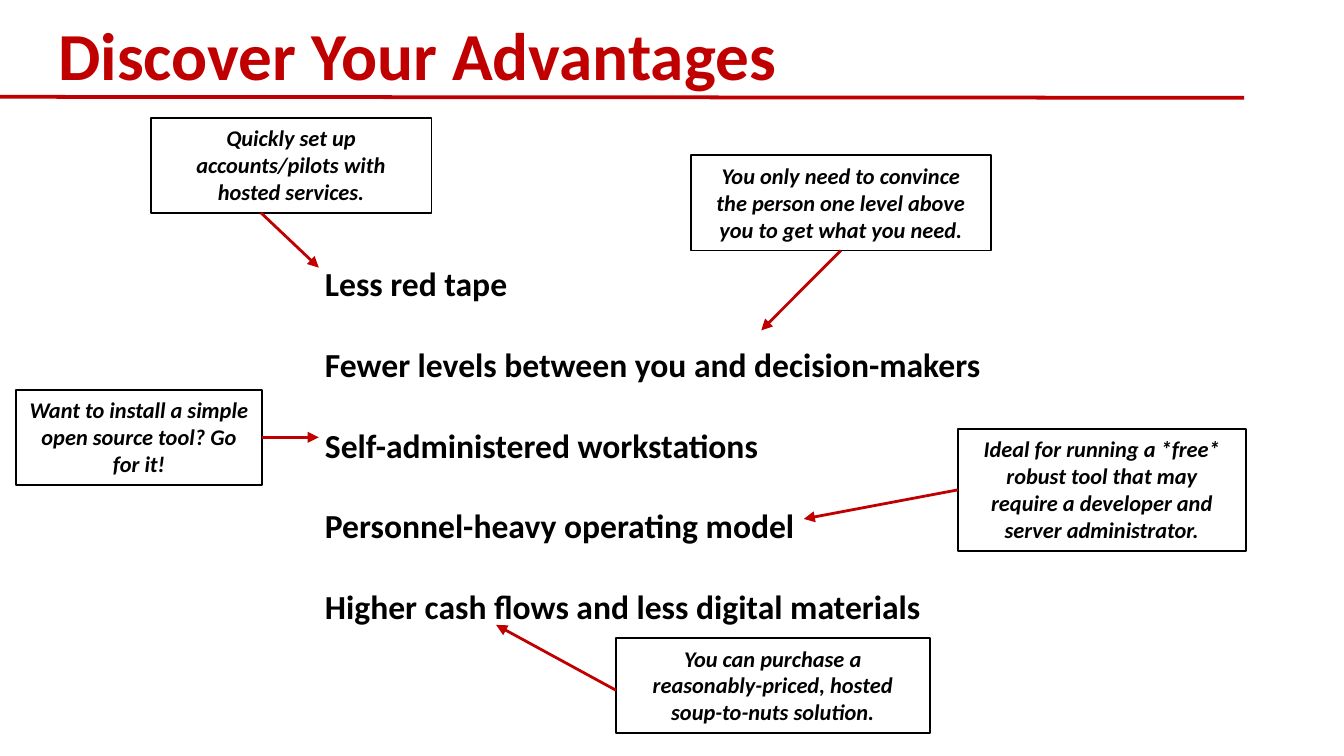
from lxml.etree import SubElement
from pptx import Presentation
from pptx.dml.color import RGBColor
from pptx.enum.shapes import MSO_CONNECTOR as Connector, MSO_SHAPE as Shape
from pptx.enum.text import MSO_ANCHOR as Anchor, MSO_AUTO_SIZE as AutoSize, PP_ALIGN as Align
from pptx.oxml.ns import qn
from pptx.util import Pt

COLORS = {"accent": "C00000", "text": "000000", "background": "FFFFFF"}
LEFT, BOTTOM, RIGHT = 1, 2, 3

ADVANTAGES = [
    "Less red tape",
    "Fewer levels between you and decision-makers",
    "Self-administered workstations",
    "Personnel-heavy operating model",
    "Higher cash flows and less digital materials",
]

# Text, box, arrow start, arrow tip, connection site
CALLOUTS = [
    ("Quickly set up accounts/pilots with hosted services.",
     (80.7, 63.2, 150.5, 51), (139.8, 114), (170.8, 143.4), None),
    ("You only need to convince the person one level above you to get what you need.",
     (370.2, 83.2, 160.6, 51), (450.5, 134.2), (407.8, 177), BOTTOM),
    ("Want to install a simple open source tool? Go for it!",
     (8.6, 208.8, 131.8, 51), (140.4, 234.3), (170.8, 234.3), RIGHT),
    ("Ideal for running a *free* robust tool that may require a developer and server administrator.",
     (513.2, 229.7, 154.2, 65.5), (513.2, 262.45), (430.6, 278), LEFT),
    ("You can purchase a reasonably-priced, hosted soup-to-nuts solution.",
     (330, 341.8, 168, 51), (330, 369.8), (265.8, 334.8), None),
]


def color(name):
    """Return the named colour."""
    return RGBColor.from_string(COLORS[name])


def style_font(font, size, name="text", italic=False):
    """Apply the bold slide typeface."""
    font.name = "Calibri"
    font.size = Pt(size)
    font.bold = True
    font.italic = italic
    font.color.rgb = color(name)


def add_title(slide, text):
    """Place the title above the rule."""
    title = slide.shapes.title
    title.left, title.top, title.width, title.height = Pt(0), Pt(0.7), Pt(612), Pt(57)
    frame = title.text_frame
    frame.text = text
    frame.auto_size = AutoSize.NONE
    frame.vertical_anchor = Anchor.BOTTOM
    frame.margin_left = frame.margin_right = Pt(7.2)
    frame.margin_top = frame.margin_bottom = Pt(7.2)
    paragraph = frame.paragraphs[0]
    paragraph.alignment = Align.LEFT
    properties = paragraph._p.get_or_add_pPr()
    properties.set("marL", "0")
    properties.set("indent", str(Pt(24)))
    style_font(paragraph.font, 36, "accent")


def add_line(slide, start, end, width, arrow=False):
    """Draw an accent line, with an arrowhead at its end if asked."""
    points = [Pt(value) for value in (*start, *end)]
    line = slide.shapes.add_connector(Connector.STRAIGHT, *points)
    line.line.color.rgb = color("accent")
    line.line.width = Pt(width)
    if arrow:
        SubElement(line.line._get_or_add_ln(), qn("a:tailEnd"), type="triangle")
    SubElement(line._element.spPr, qn("a:effectLst"))
    return line


def add_advantages(slide, items):
    """List the advantages with double line spacing."""
    box = slide.shapes.add_textbox(Pt(167), Pt(116), Pt(370), Pt(225.4))
    frame = box.text_frame
    frame.word_wrap = False
    frame.auto_size = AutoSize.SHAPE_TO_FIT_TEXT
    frame.text = "\n".join(items)
    for paragraph in frame.paragraphs:
        paragraph.line_spacing = 2.0
        style_font(paragraph.font, 18)


def add_callout(slide, text, box, start, tip, site):
    """Add an outlined note and the arrow to its advantage."""
    note = slide.shapes.add_shape(Shape.RECTANGLE, *[Pt(value) for value in box])
    note.shadow.inherit = False
    note.fill.background()
    note.line.color.rgb = color("text")
    note.line.width = Pt(1)
    frame = note.text_frame
    frame.word_wrap = True
    frame.auto_size = AutoSize.SHAPE_TO_FIT_TEXT
    frame.vertical_anchor = Anchor.TOP
    frame.text = text
    paragraph = frame.paragraphs[0]
    paragraph.alignment = Align.CENTER
    style_font(paragraph.font, 12, italic=True)
    arrow = add_line(slide, start, tip, 1.5, arrow=True)
    if site is not None:
        arrow.begin_connect(note, site)


def main():
    """Build and save the slide."""
    presentation = Presentation()
    presentation.slide_width, presentation.slide_height = Pt(720), Pt(405)
    slide = presentation.slides.add_slide(presentation.slide_layouts[5])
    slide.background.fill.solid()
    slide.background.fill.fore_color.rgb = color("background")
    add_title(slide, "Discover Your Advantages")
    add_line(slide, (0, 51.9), (666.5, 52.4), 2)
    add_advantages(slide, ADVANTAGES)
    for callout in CALLOUTS:
        add_callout(slide, *callout)
    presentation.save("out.pptx")


if __name__ == "__main__":
    main()
